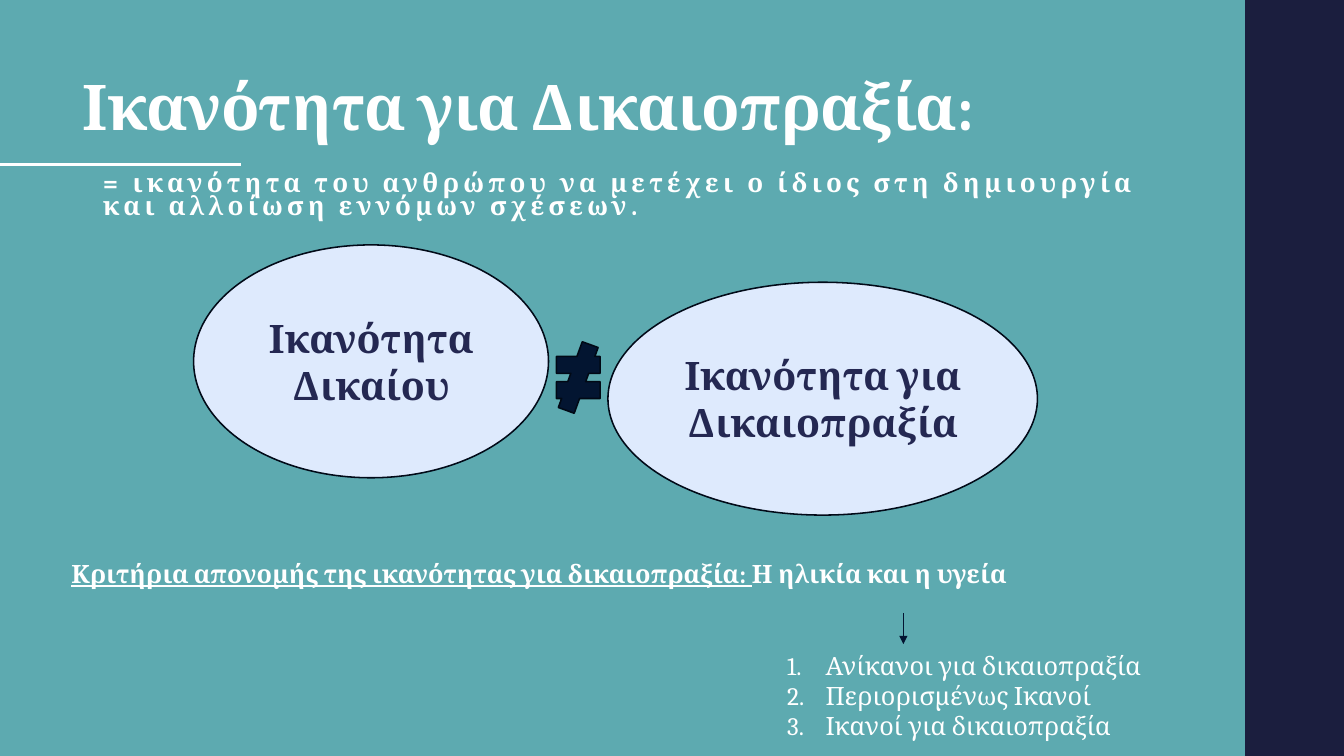
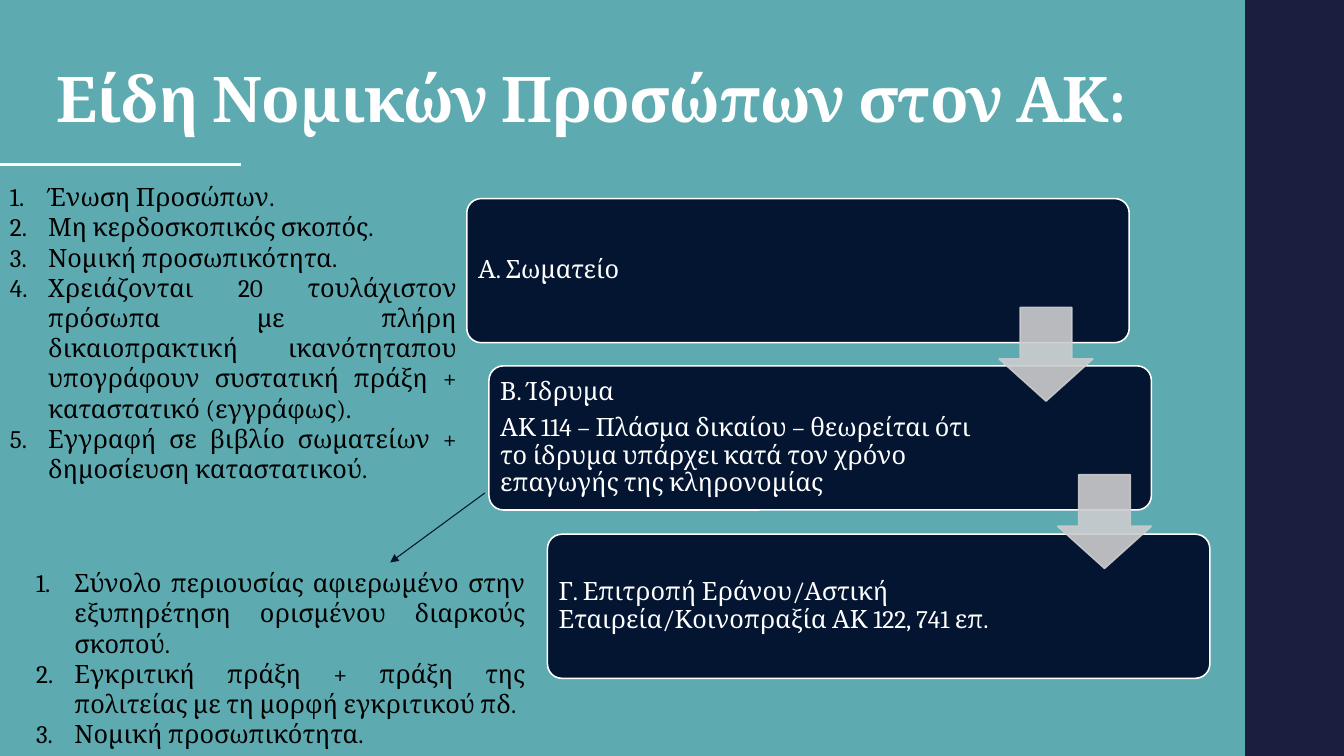
from dataclasses import dataclass

from pptx import Presentation
from pptx.dml.color import RGBColor as RGB
from pptx.enum.shapes import MSO_CONNECTOR as CONN, MSO_SHAPE as SHAPE
from pptx.enum.text import MSO_ANCHOR as ANCHOR, MSO_AUTO_SIZE as FIT, PP_ALIGN as ALIGN
from pptx.oxml.ns import qn
from pptx.util import Inches, Pt
from lxml.etree import SubElement


@dataclass(frozen=True)
class Theme:
    font: str = "Cambria"
    background: str = "5DAAB0"
    band: str = "1B1E3E"
    white: str = "FFFFFF"
    black: str = "000000"
    dark: str = "031531"
    dark_edge: str = "010915"
    oval: str = "DEEAFD"
    oval_edge: str = "010A18"
    oval_text: str = "242852"
    flow: str = "CCCCCE"
    title: float = 45
    oval_size: float = 28
    lead: float = 18.5
    text: float = 18
    edge: float = 1.1
    thin: float = 0.75
    rule: float = 2


T = Theme()


def rgb(value):
    return RGB.from_string(value)


def inches(values):
    return [Inches(v) for v in values]


def place(sp, box):
    sp.left, sp.top, sp.width, sp.height = inches(box)


def style(tf, size, color, bold=False, align=ALIGN.LEFT, line=None, after=0, spacing=None):
    for p in tf.paragraphs:
        p.alignment = align
        p.space_before, p.space_after = Pt(0), Pt(after)
        if line:
            p.line_spacing = line
        for r in p.runs:
            r.font.name, r.font.size, r.font.bold = T.font, Pt(size), bold
            r.font.color.rgb = rgb(color)
            if spacing:
                r.font._element.set("spc", str(int(spacing * 100)))


def set_indent(p, bullet, left=0.0, **attrs):
    pPr = p._p.get_or_add_pPr()
    pPr.set("marL", str(Inches(left)))
    pPr.set("indent", str(-Inches(left)))
    SubElement(pPr, qn(bullet), **attrs)


def add_title(s, text, box):
    sp = s.shapes.title
    place(sp, box)
    tf = sp.text_frame
    tf.text = text
    tf.vertical_anchor, tf.auto_size = ANCHOR.TOP, FIT.NONE
    style(tf, T.title, T.white, bold=True, line=0.9, spacing=-0.5)


def add_lead(s, text, box):
    sp = s.placeholders[1]
    place(sp, box)
    tf = sp.text_frame
    tf.text = text
    tf.vertical_anchor, tf.auto_size = ANCHOR.TOP, FIT.NONE
    set_indent(tf.paragraphs[0], "a:buNone")
    style(tf, T.lead, T.white, bold=True, line=0.75, after=2, spacing=3)


def add_text_box(s, text, box):
    tf = s.shapes.add_textbox(*inches(box)).text_frame
    tf.word_wrap, tf.auto_size = True, FIT.SHAPE_TO_FIT_TEXT
    tf.text = text
    return tf


def add_numbered(s, items, box, color):
    tf = add_text_box(s, "\n".join(items), box)
    for p in tf.paragraphs:
        set_indent(p, "a:buAutoNum", 0.38, type="arabicPeriod")
    style(tf, T.text, color, align=ALIGN.JUSTIFY)


def add_shape(s, kind, box, fill, edge=None, adjust=()):
    sp = s.shapes.add_shape(kind, *inches(box))
    sp.shadow.inherit = False
    sp.fill.solid()
    sp.fill.fore_color.rgb = rgb(fill)
    if edge:
        sp.line.color.rgb = rgb(edge)
        sp.line.width = Pt(T.edge)
    else:
        sp.line.fill.background()
    for i, value in enumerate(adjust):
        sp.adjustments[i] = value
    return sp


def add_oval(s, text, box):
    tf = add_shape(s, SHAPE.OVAL, box, T.oval, T.oval_edge).text_frame
    tf.text = text
    tf.word_wrap, tf.vertical_anchor = True, ANCHOR.MIDDLE
    style(tf, T.oval_size, T.oval_text, bold=True, align=ALIGN.CENTER)


def add_card(s, text, left, top):
    sp = add_shape(s, SHAPE.ROUNDED_RECTANGLE, (left, top, 6.57, 1.43), T.dark, T.white, (0.1,))
    tf = sp.text_frame
    tf.text = text
    tf.word_wrap, tf.vertical_anchor = True, ANCHOR.MIDDLE
    tf.margin_left = tf.margin_top = tf.margin_bottom = Inches(0.07)
    tf.margin_right = Inches(1.57)
    style(tf, T.text, T.white, line=0.9, after=6.3)


def add_flow_arrow(s, left, top):
    sp = add_shape(s, SHAPE.DOWN_ARROW, (left, top, 0.93, 0.93), T.flow, T.flow, (0.55, 0.45))
    for color in sp._element.spPr.iter(qn("a:srgbClr")):
        SubElement(color, qn("a:alpha"), val="90000")


def add_line(s, start, end, color, width, arrow=False):
    c = s.shapes.add_connector(CONN.STRAIGHT, *inches(start + end))
    c.line.color.rgb = rgb(color)
    c.line.width = Pt(width)
    if arrow:
        SubElement(c.line._get_or_add_ln(), qn("a:tailEnd"), type="triangle")
    SubElement(c._element.spPr, qn("a:effectLst"))
    return c


def decorate_master(prs, s):
    master = prs.slide_master
    master.background.fill.solid()
    master.background.fill.fore_color.rgb = rgb(T.background)
    band = add_shape(s, SHAPE.RECTANGLE, (12.35, 0, 1, 7.5), T.band)
    rule = add_line(s, (2.39, 1.63), (0, 1.63), T.white, T.rule)
    for i, sp in enumerate((band, rule)):
        master.shapes._spTree.insert(2 + i, sp._element)


def build_capacity(s):
    add_title(s, "Ικανότητα για Δικαιοπραξία:", (0.72, 0.7, 9.7, 0.97))
    add_lead(s, "= ικανότητα του ανθρώπου να μετέχει ο ίδιος στη δημιουργία "
             "και αλλοίωση εννόμων σχέσεων.", (0.92, 1.67, 10.57, 0.64))
    add_oval(s, "Ικανότητα Δικαίου", (1.92, 2.43, 3.52, 2.31))
    add_oval(s, "Ικανότητα για Δικαιοπραξία", (6.03, 2.8, 4.26, 2.31))
    add_shape(s, SHAPE.MATH_NOT_EQUAL, (5.44, 3.39, 0.59, 0.71), T.dark, T.dark_edge)

    tf = add_text_box(s, "Κριτήρια απονομής της ικανότητας για δικαιοπραξία: ",
                      (0.61, 5.49, 11.09, 0.4))
    p = tf.paragraphs[0]
    p.runs[0].font.underline = True
    p.add_run().text = "Η ηλικία και η υγεία"
    style(tf, T.text, T.white, bold=True, align=ALIGN.JUSTIFY)

    add_line(s, (8.96, 6.08), (8.96, 6.39), T.dark, T.thin, arrow=True)
    add_numbered(s, ["Ανίκανοι για δικαιοπραξία", "Περιορισμένως Ικανοί",
                     "Ικανοί για δικαιοπραξία"], (7.71, 6.4, 4, 1.01), T.white)


def build_legal_persons(s):
    add_title(s, "Είδη Νομικών Προσώπων στον ΑΚ:", (0.46, 0.63, 11.54, 0.97))
    cards = [
        ("Α. Σωματείο", 4.63, 1.97),
        ("Β. Ίδρυμα\nΑΚ 114 – Πλάσμα δικαίου – θεωρείται ότι το ίδρυμα υπάρχει "
         "κατά τον χρόνο επαγωγής της κληρονομίας", 4.85, 3.63),
        ("Γ. Επιτροπή Εράνου/Αστική Εταιρεία/Κοινοπραξία ΑΚ 122, 741 επ.", 5.43, 5.3),
    ]
    for card in cards:
        add_card(s, *card)
    for left, top in ((9.91, 3.05), (10.49, 4.71)):
        add_flow_arrow(s, left, top)
    add_numbered(s, [
        "Ένωση Προσώπων.",
        "Μη κερδοσκοπικός σκοπός.",
        "Νομική προσωπικότητα.",
        "Χρειάζονται 20 τουλάχιστον πρόσωπα με πλήρη δικαιοπρακτική ικανότηταπου "
        "υπογράφουν συστατική πράξη + καταστατικό (εγγράφως).",
        "Εγγραφή σε βιβλίο σωματείων + δημοσίευση καταστατικού.",
    ], (0, 1.75, 4.63, 3.13), T.black)
    add_numbered(s, [
        "Σύνολο περιουσίας αφιερωμένο στην εξυπηρέτηση ορισμένου διαρκούς σκοπού.",
        "Εγκριτική πράξη + πράξη της πολιτείας με τη μορφή εγκριτικού πδ.",
        "Νομική προσωπικότητα.",
    ], (0.26, 5.58, 5.05, 1.92), T.black)
    add_line(s, (4.81, 4.89), (3.87, 5.58), T.dark, T.thin, arrow=True)


def main():
    prs = Presentation()
    prs.slide_width, prs.slide_height = Inches(13.33), Inches(7.5)
    capacity = prs.slides.add_slide(prs.slide_layouts[1])
    legal_persons = prs.slides.add_slide(prs.slide_layouts[5])
    decorate_master(prs, capacity)
    build_capacity(capacity)
    build_legal_persons(legal_persons)
    prs.save("out.pptx")


if __name__ == "__main__":
    main()
